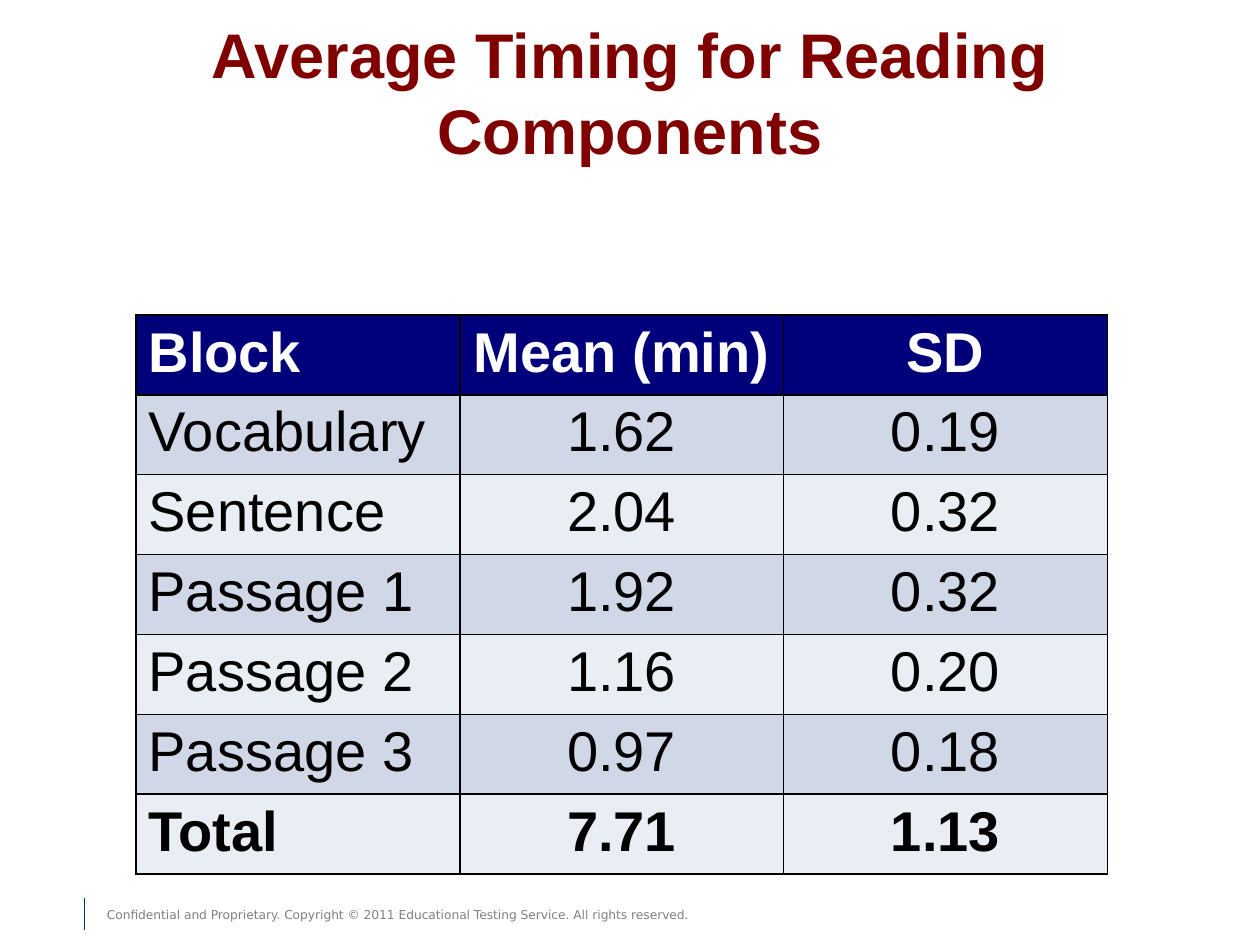
from dataclasses import dataclass

from lxml import etree
from pptx import Presentation
from pptx.dml.color import RGBColor
from pptx.enum.shapes import MSO_CONNECTOR
from pptx.enum.text import MSO_ANCHOR, PP_ALIGN
from pptx.oxml import parse_xml
from pptx.oxml.ns import nsdecls, qn
from pptx.util import Inches, Pt

LEFT, CENTER = PP_ALIGN.LEFT, PP_ALIGN.CENTER
TOP, MIDDLE = MSO_ANCHOR.TOP, MSO_ANCHOR.MIDDLE
STRAIGHT = MSO_CONNECTOR.STRAIGHT


@dataclass(frozen=True)
class Theme:
    title: str = "800000"
    header: str = "00007B"
    bands: tuple = ("D0D8E8", "E9EDF4")
    ink: str = "000000"
    white: str = "FFFFFF"
    footer: str = "808080"
    rule: str = "003067"
    font: str = "Arial"
    footer_font: str = "DejaVu Sans"
    title_size: float = 36
    table_size: float = 32
    footer_size: float = 7


THEME = Theme()


def write_text(frame, text, *, size, color, font=THEME.font, bold=False,
               align=LEFT, anchor=TOP):
    frame.word_wrap = True
    frame.vertical_anchor = anchor
    paragraph = frame.paragraphs[0]
    paragraph.alignment = align
    run = paragraph.add_run()
    run.text = text
    run.font.name = font
    run.font.size = Pt(size)
    run.font.bold = bold
    run.font.color.rgb = RGBColor.from_string(color)


def add_borders(cell, color, width):
    """Draw the four edges of a cell; edges must come before its fill."""
    properties = cell._tc.get_or_add_tcPr()
    for position, edge in enumerate(("lnL", "lnR", "lnT", "lnB")):
        properties.insert(position, parse_xml(
            f'<a:{edge} {nsdecls("a")} w="{Pt(width)}"><a:solidFill>'
            f'<a:srgbClr val="{color}"/></a:solidFill></a:{edge}>'))


presentation = Presentation()
presentation.slide_width = Inches(10)
presentation.slide_height = Inches(7.5)
slide = presentation.slides.add_slide(presentation.slide_layouts[6])

# Footer
footer = slide.shapes.add_textbox(Inches(0.75), Inches(7.15), Inches(6.25), Inches(0.22))
write_text(footer.text_frame,
           "Confidential and Proprietary. Copyright © 2011 Educational Testing Service. "
           "All rights reserved.",
           size=THEME.footer_size, color=THEME.footer, font=THEME.footer_font)
footer_rule = slide.shapes.add_connector(
    STRAIGHT, Inches(0.67), Inches(7.13), Inches(0.67), Inches(7.38))
footer_rule.line.color.rgb = RGBColor.from_string(THEME.rule)
footer_rule.line.width = Pt(0.75)
etree.SubElement(footer_rule._element.spPr, qn("a:effectLst"))

# Title
title = slide.shapes.add_textbox(0, 0, Inches(10), Inches(1.45))
write_text(title.text_frame, "Average Timing for Reading Components",
           size=THEME.title_size, color=THEME.title, bold=True,
           align=CENTER, anchor=MIDDLE)

# Timing table
timings = [
    ("Block", "Mean (min)", "SD"),
    ("Vocabulary", "1.62", "0.19"),
    ("Sentence", "2.04", "0.32"),
    ("Passage 1", "1.92", "0.32"),
    ("Passage 2", "1.16", "0.20"),
    ("Passage 3", "0.97", "0.18"),
    ("Total", "7.71", "1.13"),
]
last_row = len(timings) - 1
table = slide.shapes.add_table(len(timings), 3, Inches(1.08), Inches(2.5),
                               Inches(7.71), Inches(4.38)).table
for column in table.columns:
    column.width = Inches(2.57)

for row_index, values in enumerate(timings):
    is_header = row_index == 0
    table.rows[row_index].height = Inches(0.6 if is_header else 0.63)
    fill = THEME.header if is_header else THEME.bands[(row_index - 1) % 2]
    for column_index, value in enumerate(values):
        cell = table.cell(row_index, column_index)
        cell.fill.solid()
        cell.fill.fore_color.rgb = RGBColor.from_string(fill)
        add_borders(cell, THEME.ink, 1)
        write_text(cell.text_frame, value, size=THEME.table_size,
                   color=THEME.white if is_header else THEME.ink,
                   bold=row_index in (0, last_row),
                   align=CENTER if column_index else LEFT)

presentation.save("out.pptx")
